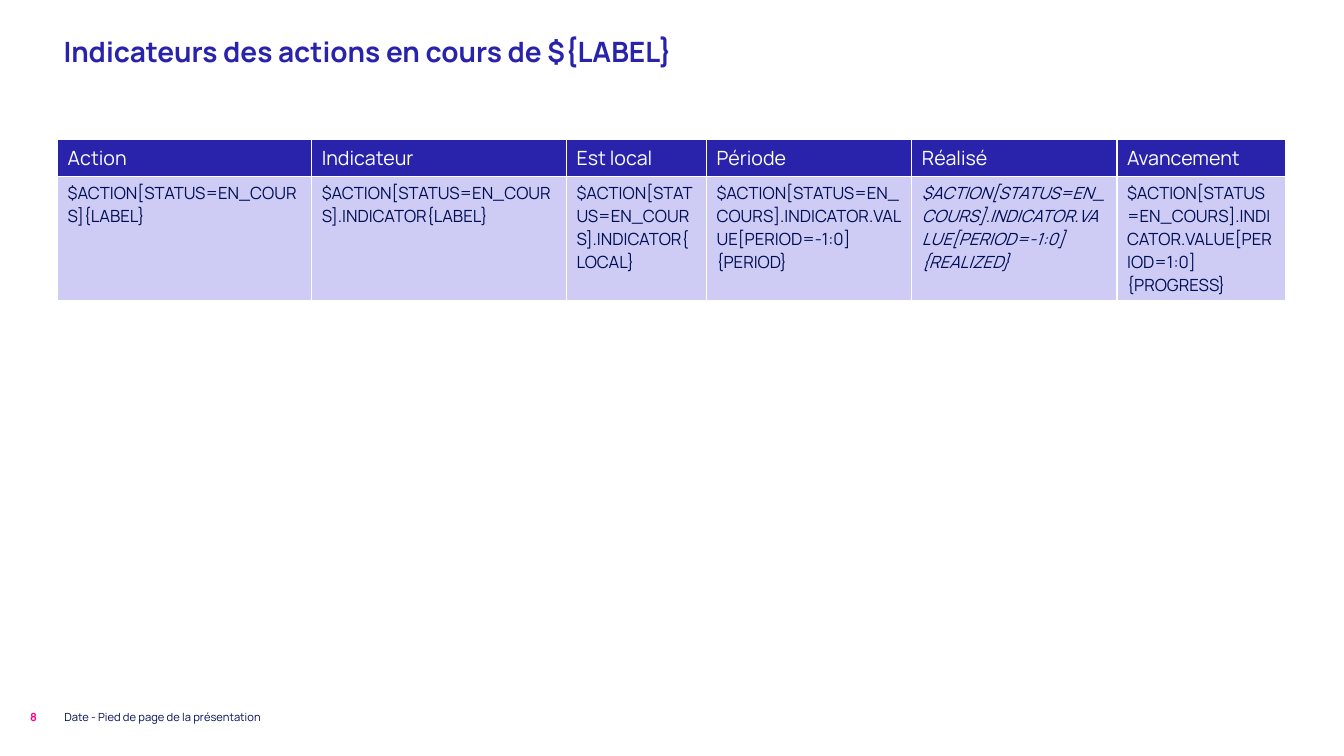
from lxml.etree import SubElement
from pptx import Presentation
from pptx.dml.color import RGBColor
from pptx.enum.text import MSO_ANCHOR, MSO_AUTO_SIZE, PP_ALIGN
from pptx.oxml.ns import qn
from pptx.util import Pt

FONT = "Manrope"
COLORS = {
    "indigo": "2823AA",
    "lavender": "CECCF5",
    "navy": "000F55",
    "pink": "FF0087",
    "white": "FFFFFF",
}

# Header, template expression and width of each column
COLUMNS = [
    ("Action", "$ACTION[STATUS=EN_COURS]{LABEL}", 181.5),
    ("Indicateur", "$ACTION[STATUS=EN_COURS].INDICATOR{LABEL}", 182),
    ("Est local", "$ACTION[STATUS=EN_COURS].INDICATOR{LOCAL}", 100),
    ("Période", "$ACTION[STATUS=EN_COURS].INDICATOR.VALUE[PERIOD=-1:0]{PERIOD}", 146.7),
    ("Réalisé", "$ACTION[STATUS=EN_COURS].INDICATOR.VALUE[PERIOD=-1:0]{REALIZED}", 146.6),
    ("Avancement", "$ACTION[STATUS=EN_COURS].INDICATOR.VALUE[PERIOD=1:0]{PROGRESS}", 120.2),
]
ITALIC_HEADER = "Réalisé"
ROW_HEIGHTS = (26.3, 89.2)


def rgb(name):
    return RGBColor.from_string(COLORS[name])


def write(text_frame, text, size, color, bold=False, italic=False):
    text_frame.word_wrap = True
    paragraph = text_frame.paragraphs[0]
    paragraph.text = text
    paragraph.alignment = PP_ALIGN.LEFT
    font = paragraph.font
    font.name, font.size = FONT, Pt(size)
    font.bold, font.italic = bold, italic
    font.color.rgb = rgb(color)


def add_title(slide, text):
    title = slide.shapes.title
    title.left, title.top, title.width, title.height = Pt(38.2), Pt(20.9), Pt(878.4), Pt(62.6)
    write(title.text_frame, text, 20, "indigo", bold=True)
    title.text_frame.vertical_anchor = MSO_ANCHOR.TOP
    title.text_frame.auto_size = MSO_AUTO_SIZE.NONE


def add_footer_text(slide, text, left, width, color, bold=False):
    box = slide.shapes.add_textbox(Pt(left), Pt(501.8), Pt(width), Pt(20.2))
    write(box.text_frame, text, 8, color, bold)
    box.text_frame.vertical_anchor = MSO_ANCHOR.MIDDLE


def add_borders(cell):
    properties = cell._tc.get_or_add_tcPr()
    for side in ("lnL", "lnR", "lnT", "lnB"):
        line = SubElement(properties, qn(f"a:{side}"), w=str(Pt(1)))
        fill = SubElement(line, qn("a:solidFill"))
        SubElement(fill, qn("a:srgbClr"), val=COLORS["white"])


def format_cell(cell, text, size, color, background, italic=False):
    add_borders(cell)
    cell.fill.solid()
    cell.fill.fore_color.rgb = rgb(background)
    write(cell.text_frame, text, size, color, italic=italic)


def add_indicator_table(slide):
    total_width = sum(width for _, _, width in COLUMNS)
    frame = slide.shapes.add_table(
        len(ROW_HEIGHTS), len(COLUMNS), Pt(41.2), Pt(99.6), Pt(total_width), Pt(sum(ROW_HEIGHTS))
    )
    table = frame.table
    table.first_row = table.horz_banding = False
    for row, height in zip(table.rows, ROW_HEIGHTS):
        row.height = Pt(height)
    for index, (header, expression, width) in enumerate(COLUMNS):
        table.columns[index].width = Pt(width)
        format_cell(table.cell(0, index), header, 14, "white", "indigo")
        format_cell(table.cell(1, index), expression, 12, "navy", "lavender",
                    italic=header == ITALIC_HEADER)


def main():
    presentation = Presentation()
    presentation.slide_width, presentation.slide_height = Pt(960), Pt(540)
    slide = presentation.slides.add_slide(presentation.slide_layouts[5])

    # Footer
    add_footer_text(slide, "Date - Pied de page de la présentation", 38.9, 311.8, "navy")
    add_footer_text(slide, "8", 14.4, 42.5, "pink", bold=True)

    # Title and table
    add_title(slide, "Indicateurs des actions en cours de ${LABEL}")
    add_indicator_table(slide)

    presentation.save("out.pptx")


if __name__ == "__main__":
    main()
